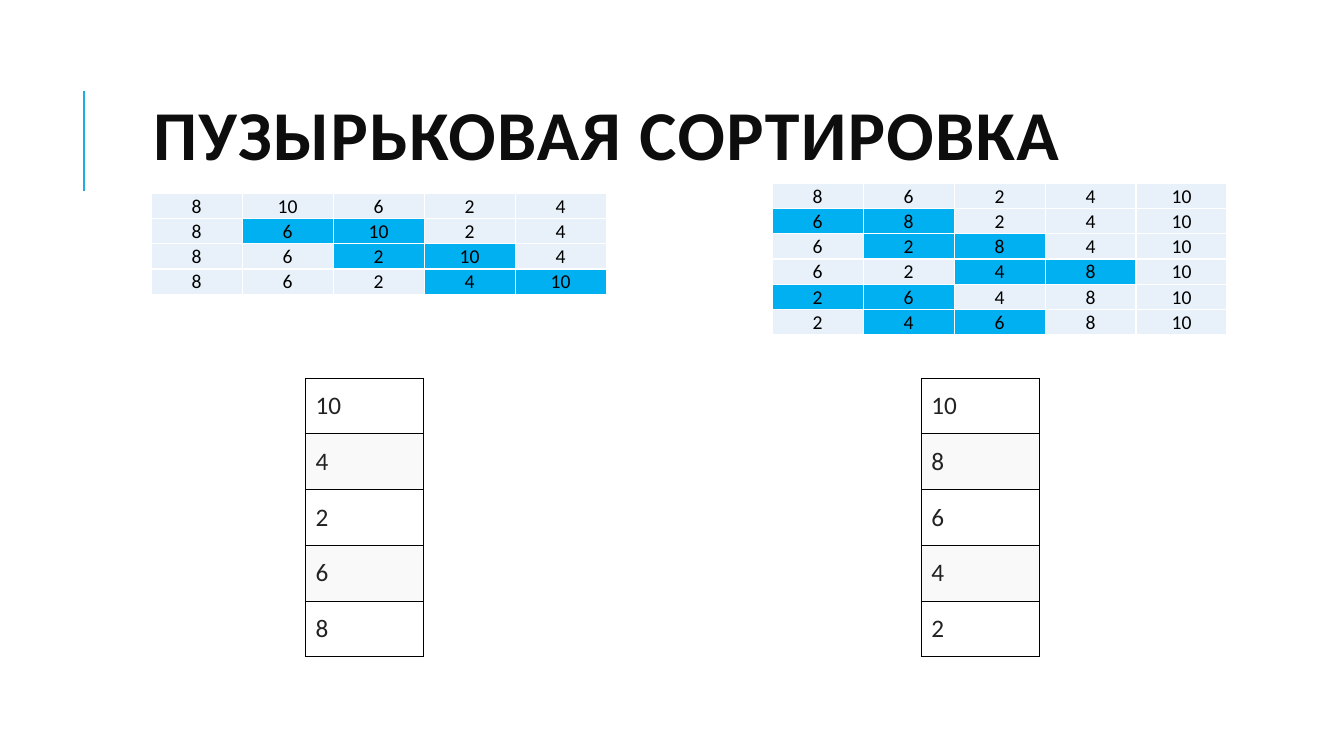
import pptx
import pptx.util
import pptx.dml.color
import pptx.enum.shapes
import pptx.enum.text
import pptx.oxml
import pptx.oxml.ns

Pt = pptx.util.Pt
Anchor = pptx.enum.text.MSO_ANCHOR
Align = pptx.enum.text.PP_ALIGN
WIDE, HIGH = pptx.util.Inches(13.33), pptx.util.Inches(7.5)
FONT = "Calibri"
INK = "0D0D0D"
PALE, SWAP = "E8F1FA", "00B0F0"
SPACE = pptx.oxml.ns.nsdecls("a")

# Array states after each swap
FIRST = [
    [8, 10, 6, 2, 4],
    [8, 6, 10, 2, 4],
    [8, 6, 2, 10, 4],
    [8, 6, 2, 4, 10],
]
LATER = [
    [8, 6, 2, 4, 10],
    [6, 8, 2, 4, 10],
    [6, 2, 8, 4, 10],
    [6, 2, 4, 8, 10],
    [2, 6, 4, 8, 10],
    [2, 4, 6, 8, 10],
]


def across(share):
    """Percent of the slide width."""
    return round(WIDE * share / 100)


def down(share):
    """Percent of the slide height."""
    return round(HIGH * share / 100)


def color(code):
    return pptx.dml.color.RGBColor.from_string(code)


def style(frame, size, code, bold=False):
    for run in frame.paragraphs[0].runs:
        run.font.name = FONT
        run.font.size = Pt(size)
        run.font.bold = bold
        run.font.color.rgb = color(code)


def border(cell, code, width):
    props = cell._tc.get_or_add_tcPr()
    for place, side in enumerate(["lnL", "lnR", "lnT", "lnB"]):
        line = pptx.oxml.parse_xml(
            f'<a:{side} {SPACE} w="{Pt(width)}">'
            f'<a:solidFill><a:srgbClr val="{code}"/></a:solidFill></a:{side}>'
        )
        props.insert(place, line)


def grid(slide, rows, left, top, wide, high):
    """Add a plain table; wide and high are the size of one cell."""
    count = len(rows[0])
    frame = slide.shapes.add_table(
        len(rows), count, across(left), down(top),
        across(wide * count), down(high * len(rows)),
    )
    table = frame.table
    table.first_row = table.horz_banding = False
    for col in table.columns:
        col.width = across(wide)
    for line, values in zip(table.rows, rows):
        line.height = down(high)
        for cell, value in zip(line.cells, values):
            cell.text_frame.text = str(value)
            cell.fill.solid()
    return table


def trace(slide, rows, left, top):
    """Table of passes; cells changed since the row above are marked."""
    table = grid(slide, rows, left, top, 6.77, 3.33)
    for r, values in enumerate(rows):
        above = rows[max(r - 1, 0)]
        for c, value in enumerate(values):
            cell = table.cell(r, c)
            cell.fill.fore_color.rgb = color(PALE if value == above[c] else SWAP)
            cell.margin_left = cell.margin_right = cell.margin_top = Pt(0.75)
            cell.margin_bottom = 0
            cell.vertical_anchor = Anchor.BOTTOM
            cell.text_frame.paragraphs[0].alignment = Align.CENTER
            style(cell.text_frame, 14, "000000")
            border(cell, "FFFFFF", 1)


def stack(slide, values, left):
    """Column of bubbles, the largest on top."""
    table = grid(slide, [[value] for value in values], left, 50, 8.78, 7.38)
    for r in range(len(values)):
        cell = table.cell(r, 0)
        cell.fill.fore_color.rgb = color("F9F9F9" if r % 2 else "FFFFFF")
        cell.vertical_anchor = Anchor.MIDDLE
        style(cell.text_frame, 18, "222222")
        border(cell, "000000", 0.75)


def accent(slide):
    bar = slide.shapes.add_connector(
        pptx.enum.shapes.MSO_CONNECTOR.STRAIGHT,
        across(6.25), down(25.33), across(6.25), down(12),
    )
    bar.line.color.rgb = color("1CADE4")
    bar.line.width = Pt(1.5)
    bar._element.spPr.append(pptx.oxml.parse_xml(f"<a:effectLst {SPACE}/>"))


def title(slide, text):
    box = slide.shapes.add_textbox(
        across(10.65), down(12.93), across(78.75), down(11.2)
    )
    frame = box.text_frame
    frame.word_wrap = True
    frame.vertical_anchor = Anchor.MIDDLE
    frame.text = text
    line = frame.paragraphs[0]
    line.line_spacing = 0.8
    style(frame, 50, INK, bold=True)
    line.runs[0].font._element.set("spc", "100")


def main():
    deck = pptx.Presentation()
    deck.slide_width, deck.slide_height = WIDE, HIGH
    slide = deck.slides.add_slide(deck.slide_layouts[6])

    # Heading
    accent(slide)
    title(slide, "ПУЗЫРЬКОВАЯ СОРТИРОВКА")

    # Swaps of the passes
    trace(slide, FIRST, 11.25, 25.6)
    trace(slide, LATER, 57.45, 24.27)

    # Array after the first pass and after the last one
    stack(slide, FIRST[-1][::-1], 22.73)
    stack(slide, LATER[-1][::-1], 68.55)

    deck.save("out.pptx")


if __name__ == "__main__":
    main()
